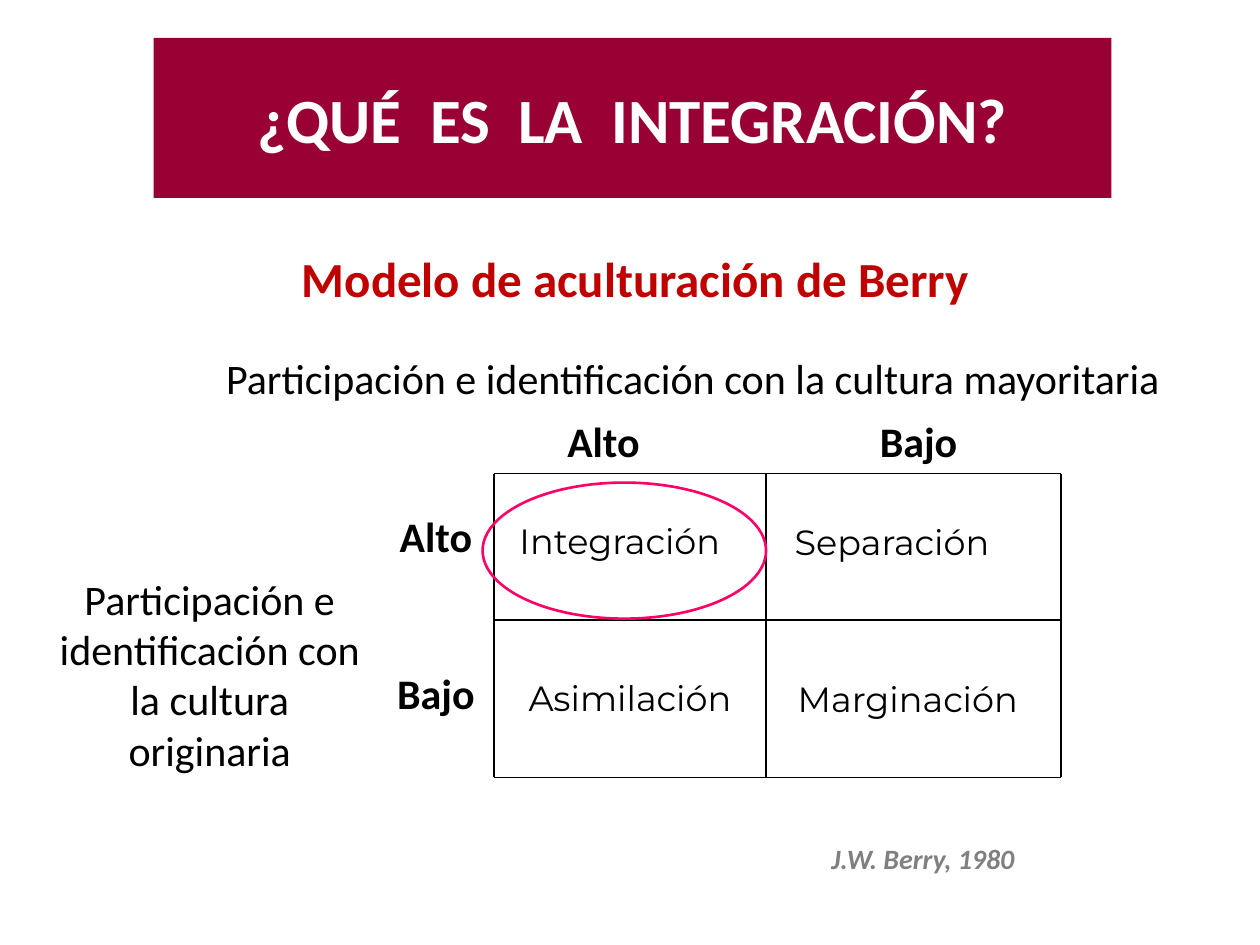
from pptx import Presentation
from pptx.dml.color import RGBColor
from pptx.enum.shapes import MSO_CONNECTOR, MSO_SHAPE
from pptx.enum.text import MSO_ANCHOR, PP_ALIGN
from pptx.oxml.ns import qn
from pptx.util import Inches, Pt
from lxml.etree import SubElement

COLORS = {
    "black": "000000",
    "white": "FFFFFF",
    "wine": "990033",
    "red": "C00000",
    "pink": "FF0066",
    "gray": "808080",
}


class Board:
    """Holds the style and the current slide."""

    font = "Calibri"
    size = 24

    def __init__(self, slide):
        self.slide = slide

    def color(self, name):
        return RGBColor.from_string(COLORS[name])

    def label(self, shape, text, size, color, font, bold, italic, align):
        """Put styled text into a shape."""
        frame = shape.text_frame
        frame.word_wrap = True
        frame.text = text
        para = frame.paragraphs[0]
        para.alignment = align
        for run in para.runs:
            run.font.name = font or self.font
            run.font.size = Pt(size or self.size)
            run.font.bold = bold
            run.font.italic = italic
            run.font.color.rgb = self.color(color)

    def title(self, box, text):
        shape = self.slide.shapes.title
        shape.left, shape.top, shape.width, shape.height = map(Inches, box)
        shape.fill.solid()
        shape.fill.fore_color.rgb = self.color("wine")
        shape.text_frame.vertical_anchor = MSO_ANCHOR.MIDDLE
        self.label(shape, text, 36, "white", None, True, False, PP_ALIGN.CENTER)

    def text(self, box, text, size=None, color="black", font=None,
             bold=False, italic=False, align=PP_ALIGN.CENTER):
        shape = self.slide.shapes.add_textbox(*map(Inches, box))
        self.label(shape, text, size, color, font, bold, italic, align)

    def line(self, x1, y1, x2, y2):
        line = self.slide.shapes.add_connector(
            MSO_CONNECTOR.STRAIGHT, *map(Inches, (x1, y1, x2, y2)))
        line.line.color.rgb = self.color("black")
        line.line.width = Pt(0.75)
        SubElement(line._element.spPr, qn("a:effectLst"))

    def ring(self, box, color):
        shape = self.slide.shapes.add_shape(MSO_SHAPE.OVAL, *map(Inches, box))
        shape.shadow.inherit = False
        shape.fill.background()
        shape.line.color.rgb = self.color(color)
        shape.line.width = Pt(1.5)


def main():
    deck = Presentation()
    deck.slide_width, deck.slide_height = Inches(10), Inches(7.5)
    board = Board(deck.slides.add_slide(deck.slide_layouts[5]))

    board.title((1.22, 0.3, 7.6, 1.27), "¿QUÉ  ES  LA  INTEGRACIÓN?")
    board.text((1.75, 1.92, 6.58, 0.57), "Modelo de aculturación de Berry",
               28, "red", bold=True)

    # Axis names and their levels
    axis = "Participación e identificación con la cultura "
    board.text((1.25, 2.75, 8.5, 0.5), axis + "mayoritaria")
    board.text((0.33, 4.5, 2.67, 1.7), axis + "originaria")
    levels = ("Alto", "Bajo")
    for level, left, top in zip(levels, (4, 6.5), (4, 5.25)):
        board.text((left, 3.25, 1.58, 0.5), level, bold=True)
        board.text((2.67, top, 1.58, 0.5), level, bold=True)

    # Grid of four outcomes
    cols, rows = (3.92, 6.08, 8.42), (3.76, 4.92, 6.17)
    for x in cols:
        board.line(x, rows[0], x, rows[-1])
    for y in rows:
        board.line(cols[0], y, cols[-1], y)

    cells = (
        ("Integración", 3.92, 4.07, 2),
        ("Separación", 6.08, 4.08, 2),
        ("Asimilación", 4, 5.32, 2),
        ("Marginación", 6.08, 5.33, 2.25),
    )
    for word, left, top, width in cells:
        board.text((left, top, width, 0.44), word, 20, font="Montserrat")
    board.ring((3.83, 3.83, 2.25, 1.08), "pink")

    board.text((6.5, 6.63, 2.89, 0.37), "J.W. Berry, 1980", 16, "gray",
               bold=True, italic=True, align=PP_ALIGN.LEFT)
    deck.save("out.pptx")


if __name__ == "__main__":
    main()
